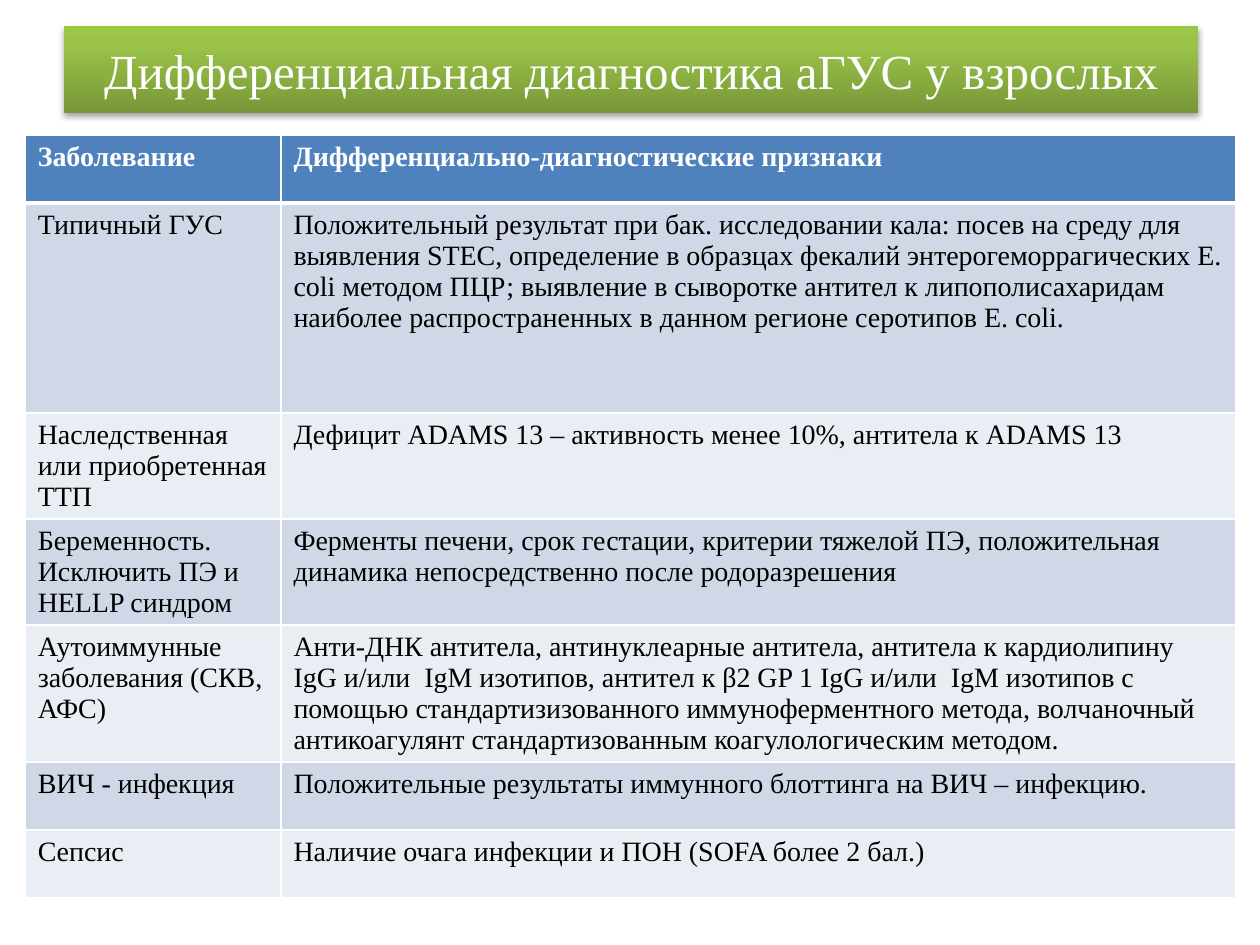
from lxml import etree
from pptx import Presentation
from pptx.dml.color import RGBColor
from pptx.enum import shapes, text
from pptx.oxml import ns
from pptx.util import Inches, Pt

TITLE = "Дифференциальная диагностика аГУС у взрослых"
ROWS = [
    ("Заболевание", "Дифференциально-диагностические признаки"),
    ("Типичный ГУС",
     "Положительный результат при бак. исследовании кала: посев на среду для выявления STEC, "
     "определение в образцах фекалий энтерогеморрагических E. coli методом ПЦР; выявление в "
     "сыворотке антител к липополисахаридам наиболее распространенных в данном регионе "
     "серотипов E. coli."),
    ("Наследственная или приобретенная ТТП",
     "Дефицит ADAMS 13 – активность менее 10%, антитела к ADAMS 13"),
    ("Беременность. Исключить ПЭ и HELLP синдром",
     "Ферменты печени, срок гестации, критерии тяжелой ПЭ, положительная динамика "
     "непосредственно после родоразрешения"),
    ("Аутоиммунные заболевания (СКВ, АФС)",
     "Анти-ДНК антитела, антинуклеарные антитела, антитела к кардиолипину  IgG и/или  IgM "
     "изотипов, антител к β2 GP 1 IgG и/или  IgM изотипов с помощью стандартизизованного "
     "иммуноферментного метода, волчаночный антикоагулянт стандартизованным "
     "коагулологическим методом."),
    ("ВИЧ - инфекция", "Положительные результаты иммунного блоттинга на ВИЧ – инфекцию."),
    ("Сепсис", "Наличие очага инфекции и ПОН (SOFA более 2 бал.)"),
]
COLUMN_WIDTHS = (2.03, 7.58)
ROW_HEIGHT = 0.54
TALL_ROWS = {1: 1.67}

FONT = "Times New Roman"
WHITE = RGBColor(0xFF, 0xFF, 0xFF)
BLACK = RGBColor(0, 0, 0)
HEADER_BLUE = RGBColor(0x4F, 0x81, 0xBD)
BANDS = (RGBColor(0xE9, 0xED, 0xF4), RGBColor(0xD0, 0xD8, 0xE8))
GREENS = [(0, RGBColor(0x77, 0x97, 0x37)),
          (80, RGBColor(0x9B, 0xC3, 0x48)),
          (100, RGBColor(0x9D, 0xC7, 0x46))]


def add_xml(parent, tag, **attributes):
    return etree.SubElement(parent, ns.qn(tag), attributes)


def add_color(parent, color):
    return add_xml(parent, "a:srgbClr", val=str(color))


def style_text(frame, size, color, bold=False):
    for paragraph in frame.paragraphs:
        for run in paragraph.runs:
            run.font.name = FONT
            run.font.size = Pt(size)
            run.font.bold = bold
            run.font.color.rgb = color


def add_borders(cell, bottom):
    properties = cell._tc.get_or_add_tcPr()
    for tag, width in (("a:lnL", 1), ("a:lnR", 1), ("a:lnT", 1), ("a:lnB", bottom)):
        border = add_xml(properties, tag, w=str(Pt(width)))
        add_color(add_xml(border, "a:solidFill"), WHITE)


def add_title(slide):
    banner = slide.shapes.add_shape(shapes.MSO_SHAPE.RECTANGLE, Inches(0.51), Inches(0.21),
                                    Inches(9), Inches(0.69))
    banner.fill.gradient()
    banner.fill.gradient_angle = 90
    banner.line.fill.background()
    banner.shadow.inherit = False

    properties = banner._element.spPr
    stops = properties.find(".//" + ns.qn("a:gsLst"))
    for stop in list(stops):
        stops.remove(stop)
    for position, color in GREENS:
        add_color(add_xml(stops, "a:gs", pos=str(position * 1000)), color)

    shadow = add_xml(properties.find(ns.qn("a:effectLst")), "a:outerShdw",
                     blurRad=str(Pt(3.1)), dist=str(Pt(1.8)), dir="5400000", rotWithShape="0")
    add_xml(add_color(shadow, BLACK), "a:alpha", val="35000")

    frame = banner.text_frame
    frame.text = TITLE
    frame.word_wrap = True
    frame.vertical_anchor = text.MSO_ANCHOR.MIDDLE
    frame.paragraphs[0].alignment = text.PP_ALIGN.CENTER
    style_text(frame, 28, WHITE)


def add_diagnoses(slide):
    heights = [TALL_ROWS.get(i, ROW_HEIGHT) for i in range(len(ROWS))]
    table = slide.shapes.add_table(len(ROWS), len(COLUMN_WIDTHS), Inches(0.2), Inches(1.07),
                                   Inches(sum(COLUMN_WIDTHS)), Inches(sum(heights))).table
    for column, width in zip(table.columns, COLUMN_WIDTHS):
        column.width = Inches(width)
    for i, (row, height, words) in enumerate(zip(table.rows, heights, ROWS)):
        row.height = Inches(height)
        header = i == 0
        for cell, wording in zip(row.cells, words):
            cell.text_frame.text = wording
            style_text(cell.text_frame, 16, WHITE if header else BLACK, header)
            add_borders(cell, 3 if header else 1)
            cell.fill.solid()
            cell.fill.fore_color.rgb = HEADER_BLUE if header else BANDS[i % 2]


def main():
    deck = Presentation()
    deck.slide_width, deck.slide_height = Inches(10), Inches(7.5)
    slide = deck.slides.add_slide(deck.slide_layouts[6])
    add_title(slide)
    add_diagnoses(slide)
    deck.save("out.pptx")


if __name__ == "__main__":
    main()
